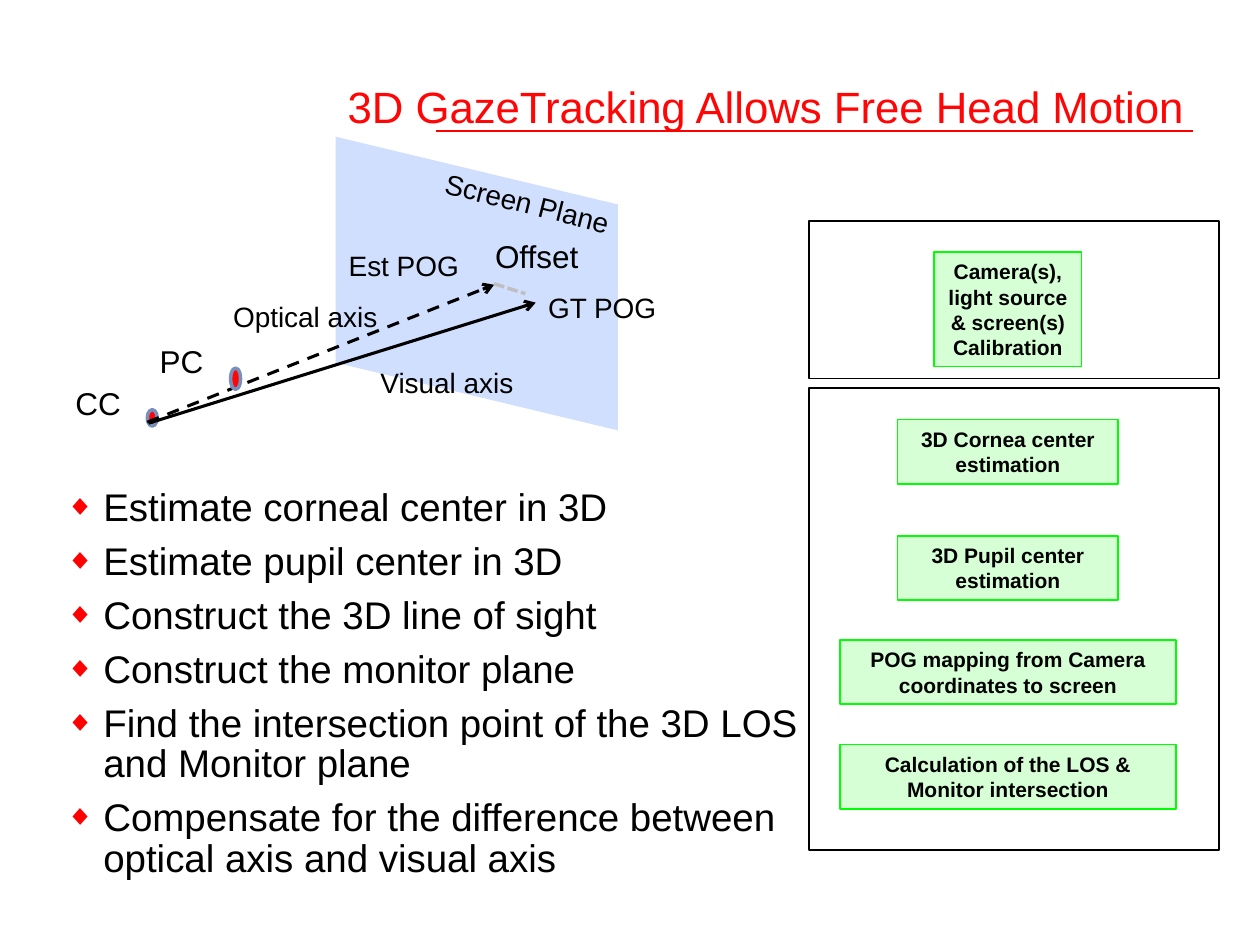
from lxml import etree
from pptx import Presentation
from pptx.dml.color import RGBColor
from pptx.enum.dml import MSO_LINE
from pptx.enum.shapes import MSO_CONNECTOR, MSO_SHAPE
from pptx.enum.text import MSO_ANCHOR, MSO_AUTO_SIZE, PP_ALIGN
from pptx.oxml.ns import qn
from pptx.util import Cm, Pt

STRAIGHT = MSO_CONNECTOR.STRAIGHT
DASH, SHORT_DASH = MSO_LINE.DASH, MSO_LINE.SQUARE_DOT
RECTANGLE, OVAL, PARALLELOGRAM = MSO_SHAPE.RECTANGLE, MSO_SHAPE.OVAL, MSO_SHAPE.PARALLELOGRAM
LEFT, CENTER, RIGHT = PP_ALIGN.LEFT, PP_ALIGN.CENTER, PP_ALIGN.RIGHT
MIDDLE, BOTTOM = MSO_ANCHOR.MIDDLE, MSO_ANCHOR.BOTTOM
NO_FIT = MSO_AUTO_SIZE.NONE

THEME = {
    "font": "Arial", "black": "000000", "title": "FE0606", "rule": "FF0000",
    "eye": "FE0606", "eye_line": "788FBC", "plane": "A2C1FE", "offset": "BFBFBF",
    "step": "00FF00", "title_size": 25, "body_size": 22, "point_size": 18,
    "label_size": 16, "step_size": 12,
}

TITLE = "3D GazeTracking Allows Free Head Motion"
TITLE_BOX = (3.61, 0.23, 20.5, 2.44)
TITLE_RULE = ((8.79, 2.64), (24.05, 2.64))
BULLETS = [
    "Estimate corneal center in 3D",
    "Estimate pupil center in 3D",
    "Construct the 3D line of sight",
    "Construct the monitor plane",
    "Find the intersection point of the 3D LOS and Monitor plane",
    "Compensate for the difference between optical axis and visual axis",
]
BODY_BOX = (1.07, 9.73, 15.44, 7.42)
BULLET_INDENT = 0.76

CORNEA_CENTER = (2.97, 8.26, 0.2, 0.33)
PUPIL_CENTER = (4.65, 7.42, 0.2, 0.43)
SCREEN_PLANE = (6.65, 2.87, 5.92, 5.69)
LABELS = [
    ("Screen Plane", (8.69, 3.63, 3.94, 0.94), "label_size", 14),
    ("Optical axis", (4.45, 5.92, 3.45, 0.94), "label_size", 0),
    ("CC", (1.27, 7.62, 1.45, 1.02), "point_size", 0),
    ("PC", (2.97, 6.78, 1.4, 1.02), "point_size", 0),
    ("Visual axis", (7.42, 7.24, 3.23, 0.94), "label_size", 0),
    ("GT POG", (10.8, 5.74, 2.74, 0.94), "label_size", 0),
    ("Offset", (9.73, 4.65, 2.21, 1.02), "point_size", 0),
    ("Est POG", (6.78, 4.88, 2.77, 0.94), "label_size", 0),
]
AXES = [
    ((2.97, 8.51), (9.96, 5.74), "black", 1.75, DASH, True),
    ((3.0, 8.53), (10.8, 6.1), "black", 1.75, None, True),
    ((9.96, 5.72), (10.59, 5.92), "offset", 2, SHORT_DASH, False),
]

STEP_CENTER = 20.32
STEPS = [
    ("Camera(s), light source & screen(s) Calibration", 5.08, 2.97, 2.31),
    ("3D Cornea center estimation", 8.46, 4.45, 1.3),
    ("3D Pupil center estimation", 10.8, 4.45, 1.3),
    ("POG mapping from Camera coordinates to screen", 12.9, 6.78, 1.3),
    ("Calculation of the LOS & Monitor intersection", 15.01, 6.78, 1.3),
]
FRAMES = [(16.31, 4.45, 8.26, 3.18), (16.31, 7.82, 8.26, 9.32)]


def color(name):
    return RGBColor.from_string(THEME[name])


def lengths(values):
    return [Cm(value) for value in values]


def apply(target, values):
    for name, value in values.items():
        setattr(target, name, value)


def place(shape, box):
    apply(shape, dict(zip(("left", "top", "width", "height"), lengths(box))))


def format_font(paragraph, size, color_name="black", bold=False):
    apply(paragraph.font, {"name": THEME["font"], "size": Pt(THEME[size]), "bold": bold})
    paragraph.font.color.rgb = color(color_name)


def add_shape(slide, kind, box, fill=None, line=None, weight=1, opacity=100):
    shape = slide.shapes.add_shape(kind, *lengths(box))
    shape.shadow.inherit = False
    if fill:
        shape.fill.solid()
        shape.fill.fore_color.rgb = color(fill)
        if opacity < 100:
            fill_color = shape.fill._xPr.find(qn("a:solidFill"))[0]
            etree.SubElement(fill_color, qn("a:alpha"), val=str(opacity * 1000))
    else:
        shape.fill.background()
    if line:
        shape.line.color.rgb = color(line)
        shape.line.width = Pt(weight)
    else:
        shape.line.fill.background()
    return shape


def add_line(slide, start, end, color_name, weight, dash=None, arrow=False):
    connector = slide.shapes.add_connector(STRAIGHT, *lengths(start + end))
    connector.line.color.rgb = color(color_name)
    apply(connector.line, {"width": Pt(weight), "dash_style": dash})
    if arrow:
        etree.SubElement(connector.line._get_or_add_ln(), qn("a:tailEnd"), type="arrow")
    etree.SubElement(connector._element.spPr, qn("a:effectLst"))


def add_label(slide, text, box, size, rotation):
    label = slide.shapes.add_textbox(*lengths(box))
    label.rotation = rotation
    apply(label.text_frame, {"text": text, "word_wrap": False})
    paragraph = label.text_frame.paragraphs[0]
    paragraph.alignment = LEFT
    format_font(paragraph, size)


def add_step(slide, text, top, width, height):
    step = add_shape(slide, RECTANGLE, (STEP_CENTER - width / 2, top, width, height),
                     "step", "step", opacity=16)
    apply(step.text_frame, {"text": text, "word_wrap": True, "vertical_anchor": MIDDLE})
    paragraph = step.text_frame.paragraphs[0]
    paragraph.alignment = CENTER
    format_font(paragraph, "step_size", bold=True)


def fill_title(title):
    place(title, TITLE_BOX)
    apply(title.text_frame, {
        "text": TITLE, "vertical_anchor": BOTTOM, "auto_size": NO_FIT, "word_wrap": True,
        "margin_left": 0, "margin_top": 0, "margin_right": Cm(0.25), "margin_bottom": 0,
    })
    paragraph = title.text_frame.paragraphs[0]
    apply(paragraph, {"alignment": RIGHT, "line_spacing": 0.85})
    format_font(paragraph, "title_size", "title")


def fill_body(body):
    place(body, BODY_BOX)
    frame = body.text_frame
    apply(frame, {"text": "\n".join(BULLETS), "auto_size": NO_FIT, "word_wrap": True})
    for index, paragraph in enumerate(frame.paragraphs):
        apply(paragraph, {"line_spacing": 0.88, "space_before": Pt(7.6 if index else 0)})
        properties = paragraph._p.get_or_add_pPr()
        properties.set("marL", str(Cm(BULLET_INDENT)))
        properties.set("indent", str(-Cm(BULLET_INDENT)))
        bullet_color = etree.SubElement(properties, qn("a:buClr"))
        etree.SubElement(bullet_color, qn("a:srgbClr"), val=THEME["rule"])
        etree.SubElement(properties, qn("a:buSzPct"), val="75000")
        etree.SubElement(properties, qn("a:buChar"), char="◆")
        format_font(paragraph, "body_size")


def main():
    presentation = Presentation()
    apply(presentation, {"slide_width": Cm(25.4), "slide_height": Cm(19.05)})
    slide = presentation.slides.add_slide(presentation.slide_layouts[1])
    fill_title(slide.shapes.title)
    fill_body(slide.placeholders[1])
    add_line(slide, *TITLE_RULE, "rule", 1)

    add_shape(slide, OVAL, CORNEA_CENTER, "eye", "eye_line", 2)
    plane = add_shape(slide, PARALLELOGRAM, SCREEN_PLANE, "plane", opacity=50)
    plane.rotation = 270
    plane.adjustments[0] = 0.24
    for label in LABELS:
        add_label(slide, *label)
    for axis in AXES:
        add_line(slide, *axis)
    add_shape(slide, OVAL, PUPIL_CENTER, "eye", "eye_line", 2)

    for step in STEPS:
        add_step(slide, *step)
    for frame in FRAMES:
        add_shape(slide, RECTANGLE, frame, line="black")
    presentation.save("out.pptx")


if __name__ == "__main__":
    main()
